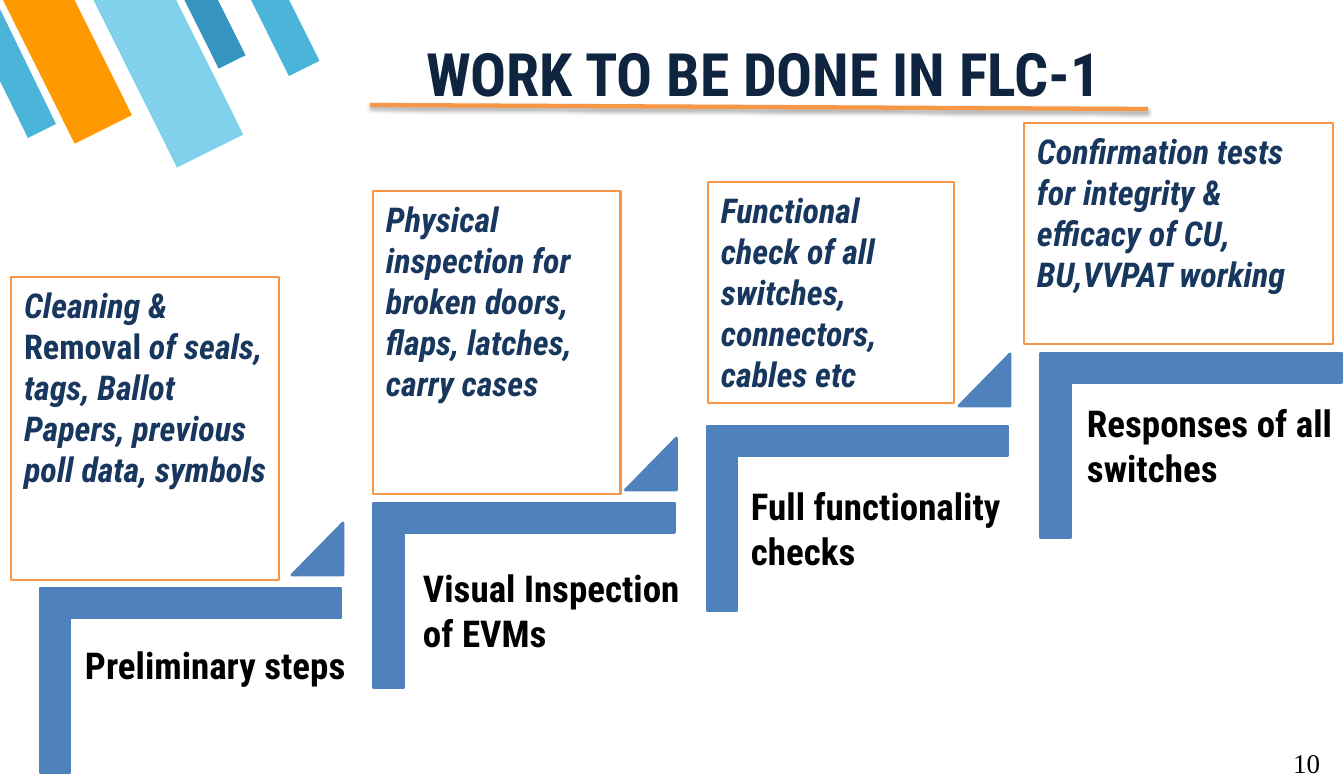
from lxml import etree
from pptx import Presentation
from pptx.dml.color import RGBColor
from pptx.enum.shapes import MSO_CONNECTOR, MSO_SHAPE
from pptx.enum.text import MSO_ANCHOR, PP_ALIGN
from pptx.oxml.ns import qn
from pptx.util import Pt

PX = 8921  # EMU in one px
WIDTH, HEIGHT = 1344, 775

RECTANGLE, CORNER = MSO_SHAPE.RECTANGLE, MSO_SHAPE.CORNER
TRIANGLE = MSO_SHAPE.ISOSCELES_TRIANGLE
STRIPE = MSO_SHAPE.FLOWCHART_MANUAL_INPUT
STRAIGHT = MSO_CONNECTOR.STRAIGHT
TOP, MIDDLE = MSO_ANCHOR.TOP, MSO_ANCHOR.MIDDLE
LEFT, CENTER, RIGHT = PP_ALIGN.LEFT, PP_ALIGN.CENTER, PP_ALIGN.RIGHT

WHITE = RGBColor(0xFF, 0xFF, 0xFF)
BLACK = RGBColor(0x00, 0x00, 0x00)
NAVY = RGBColor(0x0F, 0x24, 0x3E)
INK_BLUE = RGBColor(0x17, 0x37, 0x5E)
STEP_BLUE = RGBColor(0x4F, 0x81, 0xBD)
ORANGE = RGBColor(0xF7, 0x96, 0x46)
AMBER = RGBColor(0xFF, 0x99, 0x00)
DEEP_SKY = RGBColor(0x37, 0x96, 0xBF)
SKY = RGBColor(0x4B, 0xB5, 0xD9)
PALE_SKY = RGBColor(0x81, 0xD1, 0xEC)

HEADING_FONT, NUMBER_FONT = "Roboto Condensed", "Times New Roman"

# Content: boxes are (left, top, width, height) in px
TITLE = "WORK TO BE DONE IN FLC-1"
PAGE_NUMBER = "10"
STRIPES = [
    ((200, -11, 30, 77), DEEP_SKY),
    ((35, -25, 64, 163), AMBER),
    ((131, -28, 74, 189), PALE_SKY),
    ((268, -13, 34, 86), SKY),
]
EDGE_STRIPE = [(28, 138), (56, 124), (0, 9), (0, 81)]

# Details are paragraphs of (text, italic) spans
STEPS = [
    {"top": 588, "triangle_top": 523,
     "label": "Preliminary steps", "label_box": (72, 636, 304, 107),
     "detail_box": (11, 277, 268, 303),
     "detail": [[("Cleaning & ", True), ("Removal", False),
                 (" of seals, tags, Ballot Papers, previous poll data, symbols", True)]]},
    {"top": 503, "triangle_top": 438,
     "label": "Visual Inspection of EVMs", "label_box": (410, 559, 304, 153),
     "detail_box": (373, 191, 248, 303),
     "detail": [[("Physical inspection for broken doors, flaps, latches, carry cases", True)]]},
    {"top": 426, "triangle_top": 354,
     "label": "Full functionality checks", "label_box": (738, 477, 304, 153),
     "detail_box": (708, 182, 246, 221),
     "detail": [[("Functional check of all switches,", True)],
                [("connectors, cables etc", True)]]},
    {"top": 353, "triangle_top": None,
     "label": "Responses of all switches", "label_box": (1074, 394, 304, 107),
     "detail_box": (1024, 123, 309, 221),
     "detail": [[("Confirmation tests for integrity & efficacy of CU, BU,VVPAT working", True)]]},
]
FIRST_STEP_LEFT, STEP_PITCH = 40, 333.5
STEP_WIDTH, STEP_HEIGHT = 301, 185
TRIANGLE_OFFSET, TRIANGLE_SIZE = 252, (51, 52)


def emu(*lengths):
    return [round(length * PX) for length in lengths]


def paint(shape, fill, line=None):
    shape.shadow.inherit = False
    shape.fill.solid()
    shape.fill.fore_color.rgb = fill
    if line is None:
        shape.line.fill.background()
    else:
        shape.line.color.rgb = line
        shape.line.width = Pt(2)


def add_preset(page, kind, box, fill, line=None):
    shape = page.shapes.add_shape(kind, *emu(*box))
    paint(shape, fill, line)
    return shape


def write(shape, paragraphs, size, color, align=LEFT, anchor=TOP,
          font=HEADING_FONT, bold=True):
    frame = shape.text_frame
    frame.word_wrap = True
    frame.vertical_anchor = anchor
    frame.margin_left, frame.margin_right = emu(13, 13)
    frame.margin_top, frame.margin_bottom = emu(7, 7)
    for index, spans in enumerate(paragraphs):
        para = frame.add_paragraph() if index else frame.paragraphs[0]
        para.alignment = align
        para.font.name = font
        para.font.size = Pt(size)
        para.font.bold = bold
        para.font.color.rgb = color
        for text, italic in spans:
            span = para.add_run()
            span.text = text
            span.font.italic = italic


def add_label(page, box, text, size, color, **style):
    write(page.shapes.add_textbox(*emu(*box)), [[(text, False)]], size, color, **style)


def add_stripes(page):
    for box, color in STRIPES:
        stripe = add_preset(page, STRIPE, box, color)
        stripe.rotation = 333.5
        stripe.element.spPr.find(qn("a:xfrm")).set("flipH", "1")
    start, *others = EDGE_STRIPE
    builder = page.shapes.build_freeform(*start, scale=PX)
    builder.add_line_segments(others, close=True)
    paint(builder.convert_to_shape(), SKY)


def add_title_rule(page):
    rule = page.shapes.add_connector(STRAIGHT, *emu(370, 105, 1148, 109))
    rule.line.color.rgb = ORANGE
    rule.line.width = Pt(3)
    effects = etree.SubElement(rule.element.spPr, qn("a:effectLst"))
    shadow = etree.SubElement(effects, qn("a:outerShdw"), blurRad=str(Pt(3.1)),
                              dist=str(Pt(1.8)), dir="5400000", rotWithShape="0")
    black = etree.SubElement(shadow, qn("a:srgbClr"), val="000000")
    etree.SubElement(black, qn("a:alpha"), val="35000")


def add_step(page, index, step):
    left = FIRST_STEP_LEFT + index * STEP_PITCH
    # The corner is laid out upright and turned about its centre
    shift = (STEP_WIDTH - STEP_HEIGHT) / 2
    corner = add_preset(page, CORNER,
                        (left + shift, step["top"] - shift, STEP_HEIGHT, STEP_WIDTH),
                        STEP_BLUE, STEP_BLUE)
    corner.rotation = 90
    corner.adjustments[0] = corner.adjustments[1] = 0.16
    if step["triangle_top"] is not None:
        box = (left + TRIANGLE_OFFSET, step["triangle_top"], *TRIANGLE_SIZE)
        triangle = add_preset(page, TRIANGLE, box, STEP_BLUE, STEP_BLUE)
        triangle.adjustments[0] = 1
    add_label(page, step["label_box"], step["label"], 26, BLACK)
    detail = add_preset(page, RECTANGLE, step["detail_box"], WHITE, ORANGE)
    write(detail, step["detail"], 24, INK_BLUE)


def main():
    deck = Presentation()
    deck.slide_width, deck.slide_height = emu(WIDTH, HEIGHT)
    page = deck.slides.add_slide(deck.slide_layouts[6])

    # Corner decoration and title
    add_stripes(page)
    add_label(page, (318, 18, 891, 109), TITLE, 42, NAVY, align=CENTER, anchor=MIDDLE)
    add_title_rule(page)

    # Staircase
    for index, step in enumerate(STEPS):
        add_step(page, index, step)

    # Page number
    add_label(page, (1053, 740, 280, 51), PAGE_NUMBER, 19, BLACK,
              align=RIGHT, font=NUMBER_FONT, bold=False)
    deck.save("out.pptx")


if __name__ == "__main__":
    main()
